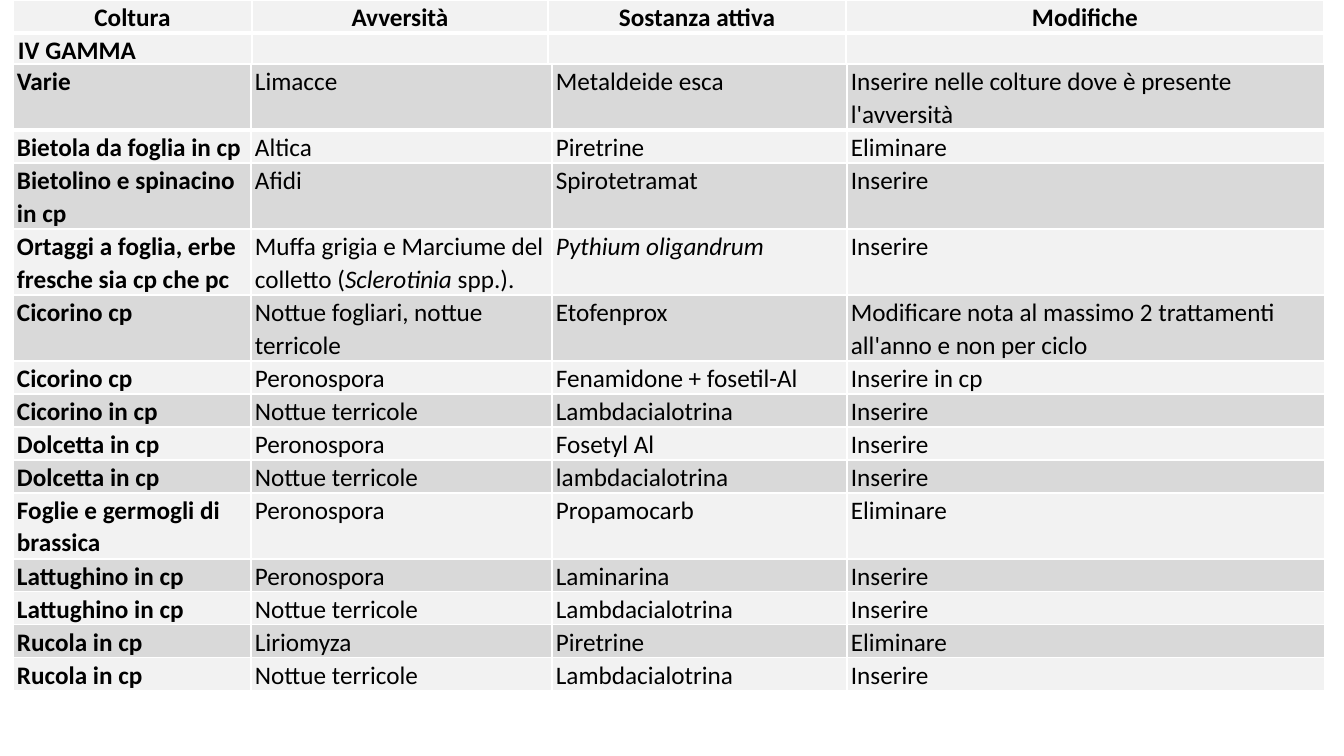
from pptx import Presentation
from pptx.dml.color import RGBColor as RGB
from pptx.enum.text import MSO_ANCHOR as Anchor, PP_ALIGN as Align
from pptx.oxml.ns import qn
from pptx.util import Emu, Pt
from lxml.etree import SubElement as Sub

PX = 9071  # EMU in one px
LINE = 33  # height of one text line, px
COLS = {"text": "000000", "rule": "FFFFFF", "pale": "F2F2F2", "dark": "D9D9D9"}

HEAD = [
    ("Coltura", "Avversità", "Sostanza attiva", "Modifiche"),
    ("IV GAMMA", "", "", ""),
]

# Text between asterisks is italic
BODY = [
    ("Varie", "Limacce", "Metaldeide esca",
     "Inserire nelle colture dove è presente l'avversità"),
    ("Bietola da foglia in cp", "Altica", "Piretrine", "Eliminare"),
    ("Bietolino e spinacino in cp", "Afidi", "Spirotetramat", "Inserire"),
    ("Ortaggi a foglia, erbe fresche sia cp che pc",
     "Muffa grigia e Marciume del colletto (*Sclerotinia *spp.).",
     "*Pythium oligandrum*", "Inserire"),
    ("Cicorino cp", "Nottue fogliari, nottue terricole", "Etofenprox",
     "Modificare nota al massimo 2 trattamenti all'anno e non per ciclo"),
    ("Cicorino cp", "Peronospora", "Fenamidone + fosetil-Al", "Inserire in cp"),
    ("Cicorino in cp", "Nottue terricole", "Lambdacialotrina", "Inserire"),
    ("Dolcetta in cp", "Peronospora", "Fosetyl Al", "Inserire"),
    ("Dolcetta in cp", "Nottue terricole", "lambdacialotrina", "Inserire"),
    ("Foglie e germogli di brassica", "Peronospora", "Propamocarb", "Eliminare"),
    ("Lattughino in cp", "Peronospora", "Laminarina", "Inserire"),
    ("Lattughino in cp", "Nottue terricole", "Lambdacialotrina", "Inserire"),
    ("Rucola in cp", "Liriomyza", "Piretrine", "Eliminare"),
    ("Rucola in cp", "Nottue terricole", "Lambdacialotrina", "Inserire"),
]
TALL = {0, 2, 3, 4, 9}  # body rows with two lines


def px(n):
    return Emu(n * PX)


def edge(cell, base):
    """White borders, the lower one base points wide."""
    props = cell._tc.get_or_add_tcPr()
    for side, size in (("L", 1), ("R", 1), ("T", 1), ("B", base)):
        line = Sub(props, qn(f"a:ln{side}"), w=str(Pt(size)))
        fill = Sub(line, qn("a:solidFill"))
        Sub(fill, qn("a:srgbClr"), val=COLS["rule"])


def write(cell, text, bold, align):
    para = cell.text_frame.paragraphs[0]
    para.alignment = align
    para.line_spacing = 1.07
    for i, part in enumerate(text.split("*")):
        if part:
            run = para.add_run()
            run.text = part
            font = run.font
            font.name, font.size = "Calibri", Pt(18)
            font.bold, font.italic = bold, i % 2 == 1
            font.color.rgb = RGB.from_string(COLS["text"])


def style(cell, tone, pad, base):
    cell.margin_left = cell.margin_right = px(pad)
    cell.margin_top = cell.margin_bottom = 0
    edge(cell, base)
    cell.fill.solid()
    cell.fill.fore_color.rgb = RGB.from_string(COLS[tone])


def grid(slide, left, top, wides, highs):
    """Plain table with the given column widths and row heights."""
    table = slide.shapes.add_table(
        len(highs), len(wides), px(left), px(top),
        px(sum(wides)), px(sum(highs))).table
    table.first_row = table.horz_banding = False
    for col, wide in zip(table.columns, wides):
        col.width = px(wide)
    for row, high in zip(table.rows, highs):
        row.height = px(high)
    return table


def header(slide, left, top):
    table = grid(slide, left, top, [239, 296, 298, 478], [LINE, 31])
    for r, row in enumerate(HEAD):
        for c, text in enumerate(row):
            cell = table.cell(r, c)
            style(cell, "pale", 5, 1 if r else 3)
            write(cell, text, True, Align.LEFT if r else Align.CENTER)
    table.cell(1, 0).vertical_anchor = Anchor.BOTTOM


def body(slide, left, top):
    highs = [LINE * (2 if r in TALL else 1) for r in range(len(BODY))]
    table = grid(slide, left, top, [238, 301, 295, 478], highs)
    for r, row in enumerate(BODY):
        for c, text in enumerate(row):
            cell = table.cell(r, c)
            style(cell, "pale" if r % 2 else "dark", 4, 1 if r else 3)
            write(cell, text, c == 0, Align.LEFT)


def main():
    deck = Presentation()
    deck.slide_width, deck.slide_height = px(1344), px(756)
    slide = deck.slides.add_slide(deck.slide_layouts[6])
    header(slide, 13, 0)
    body(slide, 13, 64)
    deck.save("out.pptx")


if __name__ == "__main__":
    main()
